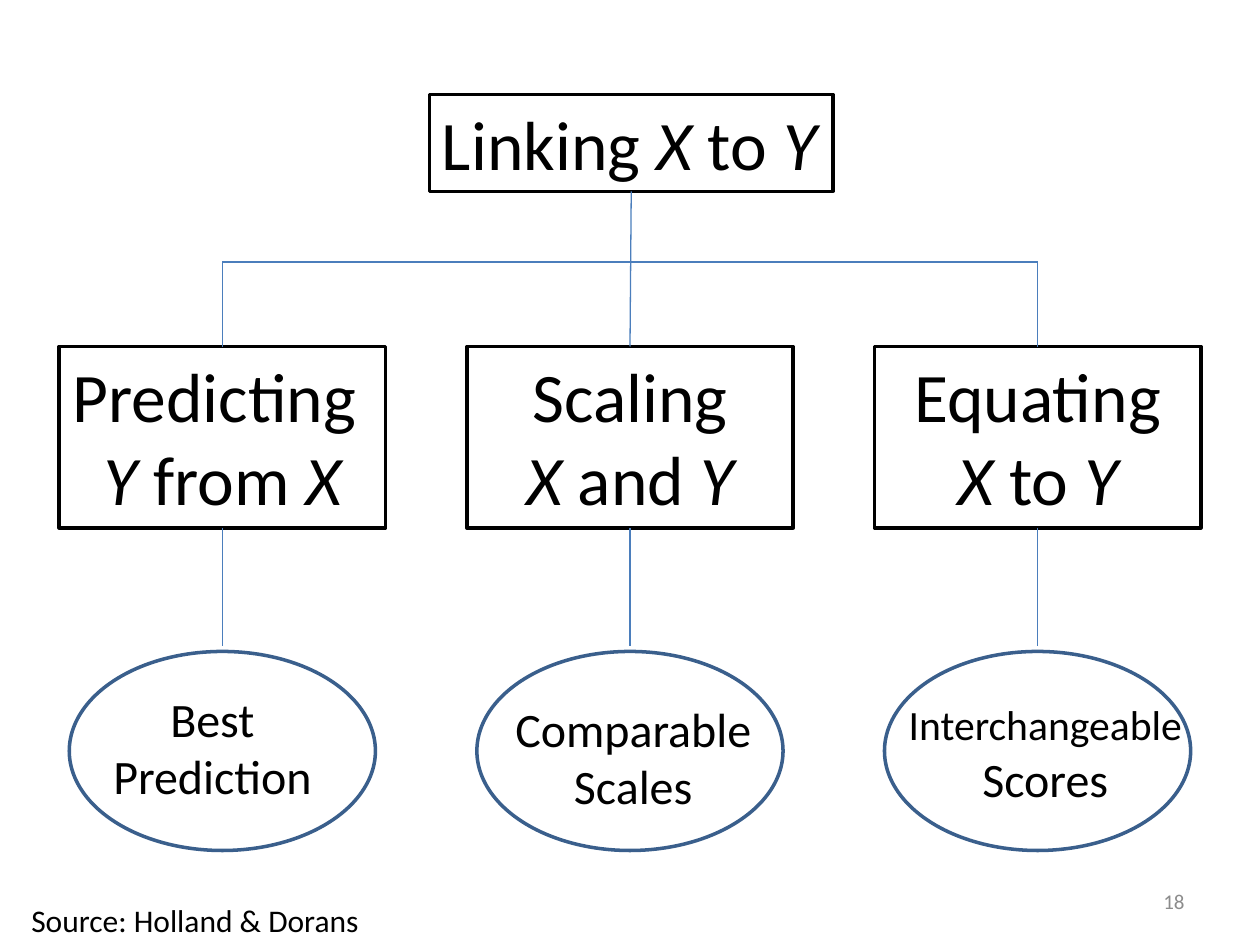
"""Build a tree slide that splits linking X to Y into three kinds with their results."""
from dataclasses import dataclass
from typing import NamedTuple

from lxml import etree
from pptx import Presentation
from pptx.dml.color import RGBColor
from pptx.enum.shapes import MSO_CONNECTOR, MSO_SHAPE
from pptx.enum.text import MSO_ANCHOR, PP_ALIGN
from pptx.oxml.ns import qn
from pptx.shapes.autoshape import Shape
from pptx.shapes.connector import Connector
from pptx.slide import Slide
from pptx.text.text import TextFrame
from pptx.util import Inches, Pt

STRAIGHT = MSO_CONNECTOR.STRAIGHT
RECTANGLE, OVAL = MSO_SHAPE.RECTANGLE, MSO_SHAPE.OVAL
LEFT, CENTER, RIGHT = PP_ALIGN.LEFT, PP_ALIGN.CENTER, PP_ALIGN.RIGHT
TOP, MIDDLE = MSO_ANCHOR.TOP, MSO_ANCHOR.MIDDLE
TOP_SITE, BOTTOM_SITE = 0, 2


@dataclass(frozen=True)
class Theme:
    font: str = "Calibri"
    ink: RGBColor = RGBColor(0, 0, 0)
    paper: RGBColor = RGBColor(255, 255, 255)
    muted: RGBColor = RGBColor(0x8C, 0x8C, 0x8C)
    branch: RGBColor = RGBColor(0x4B, 0x7E, 0xBC)
    oval: RGBColor = RGBColor(0x3A, 0x5F, 0x8C)
    heading: float = 39.7
    result: float = 27.4
    long_result: float = 23.8
    source: float = 18
    number: float = 12
    outline: float = 2
    branch_width: float = 0.75


class Area(NamedTuple):
    left: float
    top: float
    width: float
    height: float

    def lengths(self) -> list[int]:
        return [Inches(value) for value in self]


class Span(NamedTuple):
    text: str
    size: float
    italic: bool = False


Lines = list[list[Span]]


class Kind(NamedTuple):
    title: Lines
    result: Lines
    result_area: Area


THEME = Theme()
MIDDLE_X, PITCH = 5.0, 3.235
BOX_WIDTH, BOX_TOP, BOX_HEIGHT = 2.59, 2.75, 1.44
OVAL_WIDTH, OVAL_TOP, OVAL_HEIGHT = 2.43, 5.17, 1.58
BRANCH_Y, STEM_END = 2.08, 5.13


def heading(text: str) -> Span:
    return Span(text, THEME.heading)


def variable(text: str) -> Span:
    return Span(text, THEME.heading, True)


def result(text: str, size: float = THEME.result) -> list[Span]:
    return [Span(text, size)]


KINDS = [
    Kind([[heading("Predicting ")], [variable("Y "), heading("from "), variable("X")]],
         [result("Best"), result("Prediction")], Area(0.79, 5.42, 1.79, 1.02)),
    Kind([[heading("Scaling")], [variable("X"), heading(" and "), variable("Y")]],
         [result("Comparable"), result("Scales")], Area(3.98, 5.5, 2.09, 1.02)),
    Kind([[heading("Equating")], [variable("X"), heading(" to "), variable("Y")]],
         [result("Interchangeable", THEME.long_result), result("Scores")],
         Area(7.1, 5.5, 2.39, 0.96)),
]


def write(frame: TextFrame, lines: Lines, align: PP_ALIGN, wrap: bool,
          color: RGBColor = THEME.ink, anchor: MSO_ANCHOR = TOP) -> None:
    frame.word_wrap = wrap
    frame.vertical_anchor = anchor
    for index, line in enumerate(lines):
        para = frame.add_paragraph() if index else frame.paragraphs[0]
        para.alignment = align
        for span in line:
            run = para.add_run()
            run.text = span.text
            run.font.name = THEME.font
            run.font.size = Pt(span.size)
            run.font.italic = span.italic
            run.font.color.rgb = color


def add_label(page: Slide, area: Area, lines: Lines, align: PP_ALIGN, wrap: bool = False,
              color: RGBColor = THEME.ink, anchor: MSO_ANCHOR = TOP) -> None:
    label = page.shapes.add_textbox(*area.lengths())
    write(label.text_frame, lines, align, wrap, color, anchor)


def add_outline(page: Slide, preset: MSO_SHAPE, area: Area, color: RGBColor) -> Shape:
    shape = page.shapes.add_shape(preset, *area.lengths())
    shape.shadow.inherit = False
    shape.fill.background()
    shape.line.color.rgb = color
    shape.line.width = Pt(THEME.outline)
    return shape


def add_box(page: Slide, area: Area, lines: Lines, align: PP_ALIGN, wrap: bool) -> Shape:
    box = add_outline(page, RECTANGLE, area, THEME.ink)
    box.fill.solid()
    box.fill.fore_color.rgb = THEME.paper
    write(box.text_frame, lines, align, wrap)
    return box


def add_branch(page: Slide, start: tuple[float, float], end: tuple[float, float]) -> Connector:
    ends = [Inches(value) for value in (*start, *end)]
    branch = page.shapes.add_connector(STRAIGHT, *ends)
    branch.line.color.rgb = THEME.branch
    branch.line.width = Pt(THEME.branch_width)
    etree.SubElement(branch._element.spPr, qn("a:effectLst"))
    return branch


def add_kind(page: Slide, kind: Kind, center: float, root: Shape) -> None:
    box_area = Area(center - BOX_WIDTH / 2, BOX_TOP, BOX_WIDTH, BOX_HEIGHT)
    box = add_box(page, box_area, kind.title, CENTER, True)
    drop = add_branch(page, (center, BRANCH_Y), (center, BOX_TOP))
    if center == MIDDLE_X:
        drop.begin_connect(root, BOTTOM_SITE)
    drop.end_connect(box, TOP_SITE)
    stem = add_branch(page, (center, BOX_TOP + BOX_HEIGHT), (center, STEM_END))
    stem.begin_connect(box, BOTTOM_SITE)
    oval_area = Area(center - OVAL_WIDTH / 2, OVAL_TOP, OVAL_WIDTH, OVAL_HEIGHT)
    add_outline(page, OVAL, oval_area, THEME.oval)
    add_label(page, kind.result_area, kind.result, CENTER)


def main() -> None:
    deck = Presentation()
    deck.slide_width, deck.slide_height = Inches(10), Inches(7.5)
    page = deck.slides.add_slide(deck.slide_layouts[6])
    root_line = [heading("Linking "), variable("X"), heading(" to "), variable("Y")]
    root = add_box(page, Area(3.41, 0.75, 3.2, 0.77), [root_line], LEFT, False)
    add_branch(page, (MIDDLE_X - PITCH, BRANCH_Y), (MIDDLE_X + PITCH, BRANCH_Y))
    for column, kind in enumerate(KINDS, start=-1):
        add_kind(page, kind, MIDDLE_X + column * PITCH, root)
    add_label(page, Area(0.15, 7.1, 2.83, 0.4),
              [[Span("Source: Holland & Dorans", THEME.source)]], LEFT)
    add_label(page, Area(7.17, 6.95, 2.33, 0.4), [[Span("18", THEME.number)]],
              RIGHT, True, THEME.muted, MIDDLE)
    deck.save("out.pptx")


if __name__ == "__main__":
    main()
